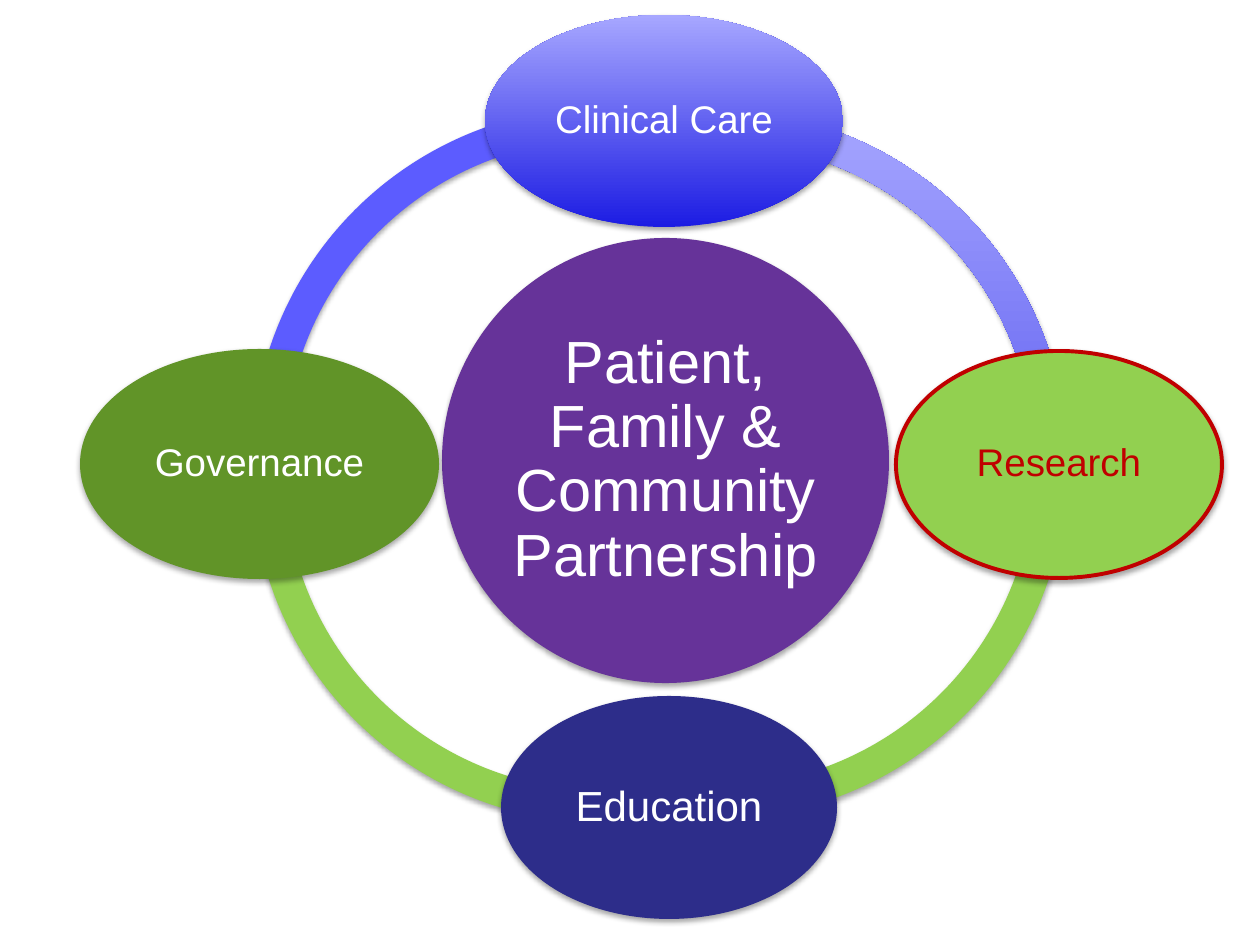
from lxml import etree
from pptx import Presentation
from pptx.dml.color import RGBColor
from pptx.enum.shapes import MSO_SHAPE
from pptx.enum.text import MSO_ANCHOR, PP_ALIGN
from pptx.oxml.ns import qn
from pptx.util import Pt

ARC, OVAL = MSO_SHAPE.BLOCK_ARC, MSO_SHAPE.OVAL
MIDDLE, CENTER = MSO_ANCHOR.MIDDLE, PP_ALIGN.CENTER
SCALE = 914400 / 126  # EMU per px

COLORS = {
    "white": "FFFFFF", "black": "000000", "purple": "663399",
    "blue": "5C5CFF", "deep": "1C1CE3", "pale": "A7A7FF", "navy": "2D2D8A",
    "lime": "92D050", "green": "619428", "red": "C00000",
}
FADE = ("deep", "pale")  # bottom to top


def px(n):
    return round(n * SCALE)


def rgb(name):
    return RGBColor.from_string(COLORS[name])


def paint(fill, color):
    """Fill with one named colour, or fade upwards through a pair."""
    if isinstance(color, str):
        fill.solid()
        fill.fore_color.rgb = rgb(color)
        return
    fill.gradient()
    fill.gradient_angle = 90
    for stop, name, pos in zip(fill.gradient_stops, color, (0, 1)):
        stop.color.rgb = rgb(name)
        stop.position = pos


def shade(shape):
    """Cast a soft shadow straight down."""
    shape.shadow.inherit = False
    effects = shape._element.spPr.find(qn("a:effectLst"))
    outer = etree.SubElement(effects, qn("a:outerShdw"), blurRad=str(Pt(3.1)),
                             dist=str(Pt(1.8)), dir="5400000", rotWithShape="0")
    tint = etree.SubElement(outer, qn("a:srgbClr"), val=COLORS["black"])
    etree.SubElement(tint, qn("a:alpha"), val="35000")


def draw(slide, kind, box, color, edge=None):
    shape = slide.shapes.add_shape(kind, *map(px, box))
    paint(shape.fill, color)
    if edge:
        shape.line.color.rgb = rgb(edge)
        shape.line.width = Pt(2.25)
    else:
        shape.line.fill.background()
    shade(shape)
    return shape


def write(shape, text, size=22, color="white", inset=4):
    frame = shape.text_frame
    frame.word_wrap = True
    frame.vertical_anchor = MIDDLE
    frame.margin_left = frame.margin_right = px(inset)
    frame.margin_top = frame.margin_bottom = px(inset)
    para = frame.paragraphs[0]
    para.alignment = CENTER
    para.line_spacing = 0.9
    run = para.add_run()
    run.text = text
    run.font.name = "Arial"
    run.font.size = Pt(size)
    run.font.color.rgb = rgb(color)


def ring(slide, left, top):
    """Four quarter arcs: offset, start and end in degrees, colour."""
    size = 703
    arcs = [
        (0, 0, 179.09, 280.21, "blue"),
        (0, 13, 78.79, 181.1, "lime"),
        (112, 9, 359.48, 97.7, "lime"),
        (112, 3, 261.31, 0.66, FADE),
    ]
    for dx, dy, start, end, color in arcs:
        arc = draw(slide, ARC, (left + dx, top + dy, size, size), color)
        arc.adjustments[0] = start * 0.6  # 60000 units a degree
        arc.adjustments[1] = end * 0.6
        arc.adjustments[2] = 0.046


def node(slide, box, text, fill, edge=None, **style):
    write(draw(slide, OVAL, box, fill, edge), text, **style)


def main():
    deck = Presentation()
    deck.slide_width, deck.slide_height = px(1260), px(945)
    slide = deck.slides.add_slide(deck.slide_layouts[6])

    # Ring and centre
    ring(slide, 252, 107)
    node(slide, (442, 238, 447, 445),
         "Patient, Family & Community Partnership", "purple", size=34, inset=6)

    # Four areas around the centre
    node(slide, (485, 15, 358, 212), "Clinical Care", FADE)
    node(slide, (896, 351, 326, 227), "Research", "lime", "red", color="red")
    node(slide, (501, 696, 336, 223), "Education", "navy", size=24)
    node(slide, (80, 349, 359, 230), "Governance", "green")

    deck.save("out.pptx")


if __name__ == "__main__":
    main()
